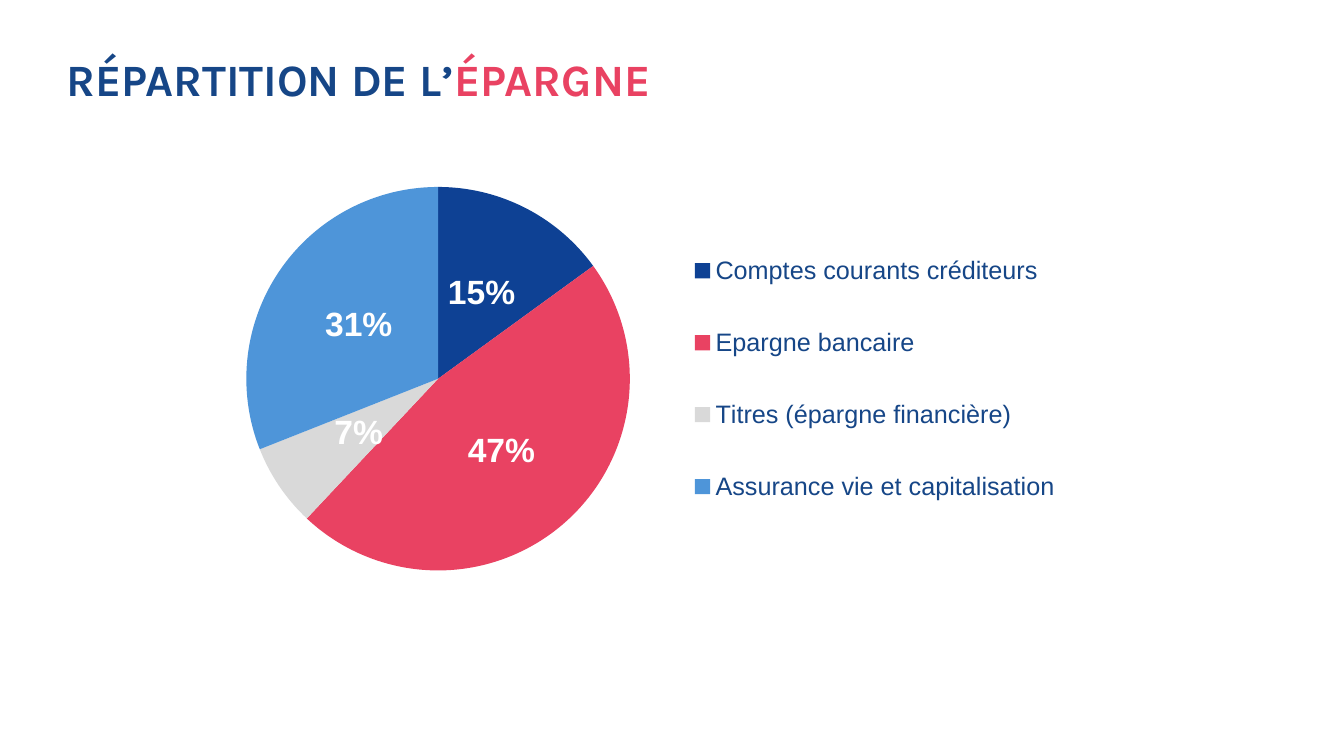
from dataclasses import dataclass

from lxml.etree import SubElement
from pptx import Presentation
from pptx.chart.chart import Chart
from pptx.chart.data import CategoryChartData
from pptx.dml.color import RGBColor
from pptx.enum.chart import XL_CHART_TYPE as ChartType
from pptx.enum.chart import XL_LABEL_POSITION as LabelPosition
from pptx.enum.chart import XL_LEGEND_POSITION as LegendPosition
from pptx.enum.text import MSO_ANCHOR as Anchor
from pptx.oxml.ns import qn
from pptx.slide import Slide
from pptx.text.text import Font
from pptx.util import Cm, Pt

COLORS = {
    "text": "164687",
    "navy": "0E4194",
    "red": "E94262",
    "grey": "D9D9D9",
    "sky": "4E95D9",
    "white": "FFFFFF",
    "black": "000000",
}


@dataclass(frozen=True)
class Saving:
    label: str
    percent: int
    color: str


@dataclass(frozen=True)
class TitlePart:
    text: str
    color: str


@dataclass(frozen=True)
class Area:
    """Part of the chart, as fractions of its width and height."""
    x: float
    y: float
    w: float
    h: float


TITLE = [TitlePart("RÉPARTITION DE L’", "text"), TitlePart("ÉPARGNE", "red")]
SAVINGS = [
    Saving("Comptes courants créditeurs", 15, "navy"),
    Saving("Epargne bancaire", 47, "red"),
    Saving("Titres (épargne financière)", 7, "grey"),
    Saving("Assurance vie et capitalisation", 31, "sky"),
]
PIE_AREA = Area(0, 0.04, 0.59, 0.74)
LEGEND_AREA = Area(0.48, 0.09, 0.32, 0.64)


def rgb(color: str) -> RGBColor:
    return RGBColor.from_string(COLORS[color])


def style_font(font: Font, name: str, size: int, color: str, bold: bool = False) -> None:
    font.name = name
    font.size = Pt(size)
    font.bold = bold
    font.color.rgb = rgb(color)


def place(part, area: Area, index: int, inner: bool = False) -> None:
    """Give a chart part a manual layout, as its child number index."""
    for old in part.findall(qn("c:layout")):
        part.remove(old)
    layout = SubElement(part, qn("c:layout"))
    part.insert(index, layout)
    manual = SubElement(layout, qn("c:manualLayout"))
    settings = {"layoutTarget": "inner"} if inner else {}
    settings |= {"xMode": "edge", "yMode": "edge"}
    settings |= {"x": area.x, "y": area.y, "w": area.w, "h": area.h}
    for tag, value in settings.items():
        SubElement(manual, qn(f"c:{tag}")).set("val", str(value))


def add_title(slide: Slide) -> None:
    title = slide.shapes.add_textbox(Cm(1.42), Cm(1.3), Cm(24.54), Cm(1.55))
    frame = title.text_frame
    frame.word_wrap = True
    frame.vertical_anchor = Anchor.MIDDLE
    paragraph = frame.paragraphs[0]
    paragraph.line_spacing = 0.9
    for part in TITLE:
        run = paragraph.add_run()
        run.text = part.text
        style_font(run.font, "Karla", 32, part.color, bold=True)


def add_savings_pie(slide: Slide) -> Chart:
    data = CategoryChartData()
    data.categories = [saving.label for saving in SAVINGS]
    data.add_series("Series 1", [saving.percent for saving in SAVINGS])
    chart = slide.shapes.add_chart(
        ChartType.PIE, Cm(1.63), Cm(4.19), Cm(31.9), Cm(13.06), data
    ).chart
    chart.has_title = False
    style_font(chart.font, "Karla", 10, "black")

    pie = chart.plots[0]
    pie.vary_by_categories = True
    for index, saving in enumerate(SAVINGS):
        fill = pie.series[0].points[index].format.fill
        fill.solid()
        fill.fore_color.rgb = rgb(saving.color)

    labels = pie.series[0].data_labels
    labels.show_value = False
    labels.show_percentage = True
    labels.number_format = "0%"
    labels.number_format_is_linked = False
    labels.position = LabelPosition.CENTER
    style_font(labels.font, "Arial", 24, "white", bold=True)
    return chart


def add_legend(chart: Chart) -> None:
    chart.has_legend = True
    legend = chart.legend
    legend.position = LegendPosition.BOTTOM
    legend.include_in_layout = False
    style_font(legend.font, "Arial", 18, "text")


def main() -> None:
    deck = Presentation()
    deck.slide_width, deck.slide_height = Cm(33.87), Cm(19.05)
    slide = deck.slides.add_slide(deck.slide_layouts[6])
    add_title(slide)
    chart = add_savings_pie(slide)
    add_legend(chart)
    chart_space = chart.element
    place(chart_space.find(f".//{qn('c:plotArea')}"), PIE_AREA, 0, inner=True)
    place(chart_space.find(f".//{qn('c:legend')}"), LEGEND_AREA, 1)
    deck.save("out.pptx")


if __name__ == "__main__":
    main()
